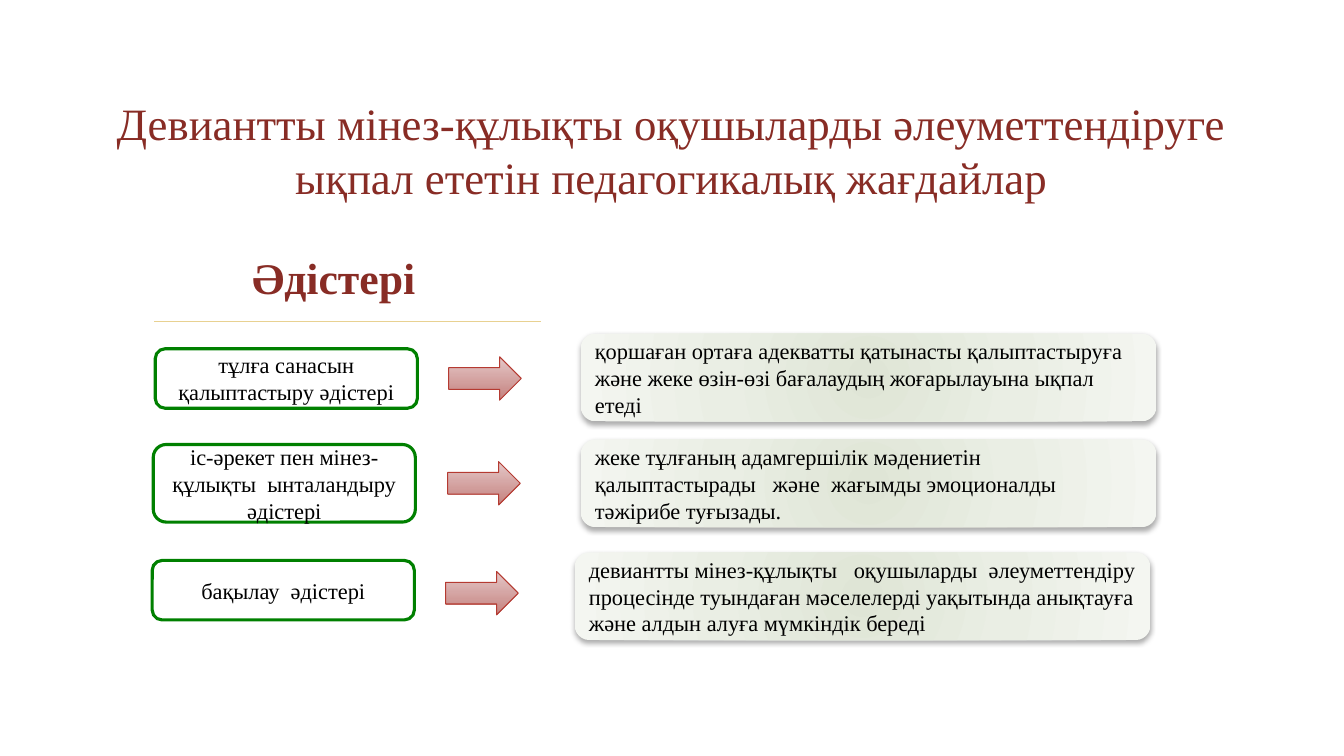
from dataclasses import dataclass

from lxml.etree import SubElement
from pptx import Presentation
from pptx.dml.color import RGBColor
from pptx.enum.shapes import MSO_CONNECTOR, MSO_SHAPE
from pptx.enum.text import MSO_ANCHOR, PP_ALIGN
from pptx.oxml import parse_xml
from pptx.oxml.ns import nsdecls, qn
from pptx.util import Inches, Pt


@dataclass(frozen=True)
class Theme:
    font: str = "Times New Roman"
    heading: str = "882C25"
    text: str = "000000"
    rule: str = "E8D191"
    method_fill: str = "FFFFFF"
    method_line: str = "008000"
    arrow_line: str = "B53A31"
    arrow_stops: tuple = ((0, "E4C8C8"), (100, "C5817E"))
    result_stops: tuple = ((0, "DFE5D6"), (50, "EAEEE4"), (100, "F4F6F1"))
    title_size: float = 32
    subtitle_size: float = 31.2
    body_size: float = 16


@dataclass(frozen=True)
class Row:
    method: str
    method_box: tuple
    arrow_box: tuple
    result: str
    result_box: tuple


THEME = Theme()
METHOD_WIDTH = 2.6
ARROW_SIZE = (0.72, 0.43)
RESULT_SIZE = (5.71, 0.87)
DOWNWARD = '<a:lin ang="5400000" scaled="0"/>'
FROM_CENTRE = '<a:path path="circle"><a:fillToRect l="50000" t="50000" r="50000" b="50000"/></a:path>'

ROWS = (
    Row("тұлға санасын қалыптастыру әдістері",
        (1.54, 3.46, METHOD_WIDTH, 0.59), (4.45, 3.54, *ARROW_SIZE),
        "қоршаған ортаға адекватты қатынасты қалыптастыруға және жеке "
        "өзін-өзі бағалаудың жоғарылауына ықпал етеді",
        (5.76, 3.31, *RESULT_SIZE)),
    Row("іс-әрекет пен мінез-құлықты  ынталандыру әдістері",
        (1.52, 4.41, METHOD_WIDTH, 0.77), (4.44, 4.58, *ARROW_SIZE),
        "жеке тұлғаның адамгершілік мәдениетін қалыптастырады   және  "
        "жағымды эмоционалды тәжірибе туғызады.",
        (5.76, 4.36, *RESULT_SIZE)),
    Row("бақылау  әдістері",
        (1.51, 5.56, METHOD_WIDTH, 0.59), (4.42, 5.67, *ARROW_SIZE),
        "девиантты мінез-құлықты   оқушыларды  әлеуметтендіру процесінде "
        "туындаған мәселелерді уақытында анықтауға және алдын алуға мүмкіндік береді",
        (5.7, 5.48, *RESULT_SIZE)),
)


def inches(box):
    return [Inches(length) for length in box]


def write(holder, text, size, color, align, anchor, bold=False):
    frame = holder.text_frame
    frame.word_wrap = True
    frame.vertical_anchor = anchor
    paragraph = frame.paragraphs[0]
    paragraph.alignment = align
    run = paragraph.add_run()
    run.text = text
    formats = {"name": THEME.font, "size": Pt(size), "bold": bold}
    for attribute, value in formats.items():
        setattr(run.font, attribute, value)
    run.font.color.rgb = RGBColor.from_string(color)


def add_outlined(slide, preset, box, color, width):
    outlined = slide.shapes.add_shape(preset, *inches(box))
    outlined.shadow.inherit = False
    outlined.line.color.rgb = RGBColor.from_string(color)
    outlined.line.width = Pt(width)
    return outlined


def fill_gradient(part, stops, direction):
    """Replace the fill by colour stops; direction is the XML of the spread."""
    part.fill.background()
    plain = part.fill._xPr.find(qn("a:noFill"))
    marks = "".join(
        f'<a:gs pos="{position * 1000}"><a:srgbClr val="{color}"/></a:gs>'
        for position, color in stops)
    plain.getparent().replace(plain, parse_xml(
        f'<a:gradFill {nsdecls("a")} rotWithShape="1"><a:gsLst>{marks}</a:gsLst>'
        f'{direction}</a:gradFill>'))


def add_soft_shadow(part):
    part.shadow.inherit = False
    effects = part._element.spPr.find(qn("a:effectLst"))
    effects.append(parse_xml(
        f'<a:outerShdw {nsdecls("a")} blurRad="{Pt(3.5)}" dist="{Pt(2.2)}" '
        'dir="5400000" rotWithShape="0"><a:srgbClr val="000000">'
        '<a:alpha val="32000"/></a:srgbClr></a:outerShdw>'))


def add_heading(slide, box, text, size, bold=False):
    heading = slide.shapes.add_textbox(*inches(box))
    write(heading, text, size, THEME.heading, PP_ALIGN.CENTER, MSO_ANCHOR.BOTTOM, bold)


def add_rule(slide, left, top, width):
    rule = slide.shapes.add_connector(
        MSO_CONNECTOR.STRAIGHT, *inches((left, top, left + width, top)))
    rule.line.color.rgb = RGBColor.from_string(THEME.rule)
    rule.line.width = Pt(1.25)
    SubElement(rule._element.spPr, qn("a:effectLst"))


def add_method(slide, box, text):
    method = add_outlined(slide, MSO_SHAPE.ROUNDED_RECTANGLE, box, THEME.method_line, 2.25)
    method.fill.solid()
    method.fill.fore_color.rgb = RGBColor.from_string(THEME.method_fill)
    write(method, text, THEME.body_size, THEME.text, PP_ALIGN.CENTER, MSO_ANCHOR.MIDDLE)


def add_arrow(slide, box):
    arrow = add_outlined(slide, MSO_SHAPE.RIGHT_ARROW, box, THEME.arrow_line, 0.75)
    fill_gradient(arrow, THEME.arrow_stops, DOWNWARD)


def add_result(slide, box, text):
    result = slide.shapes.add_shape(MSO_SHAPE.ROUNDED_RECTANGLE, *inches(box))
    fill_gradient(result, THEME.result_stops, FROM_CENTRE)
    result.line.fill.background()
    add_soft_shadow(result)
    write(result, text, THEME.body_size, THEME.text, PP_ALIGN.LEFT, MSO_ANCHOR.MIDDLE)


def add_row(slide, row):
    add_method(slide, row.method_box, row.method)
    add_result(slide, row.result_box, row.result)
    add_arrow(slide, row.arrow_box)


def main():
    deck = Presentation()
    deck.slide_width, deck.slide_height = inches((13.33, 7.5))
    slide = deck.slides.add_slide(deck.slide_layouts[6])
    add_rule(slide, 1.53, 3.19, 3.84)
    add_heading(slide, (0.6, 0.57, 12.12, 1.5),
                "Девиантты мінез-құлықты оқушыларды әлеуметтендіруге "
                "ықпал ететін педагогикалық жағдайлар", THEME.title_size)
    add_heading(slide, (0.6, 2.29, 5.42, 0.77), "Әдістері", THEME.subtitle_size, bold=True)
    for row in ROWS:
        add_row(slide, row)
    deck.save("out.pptx")


if __name__ == "__main__":
    main()
